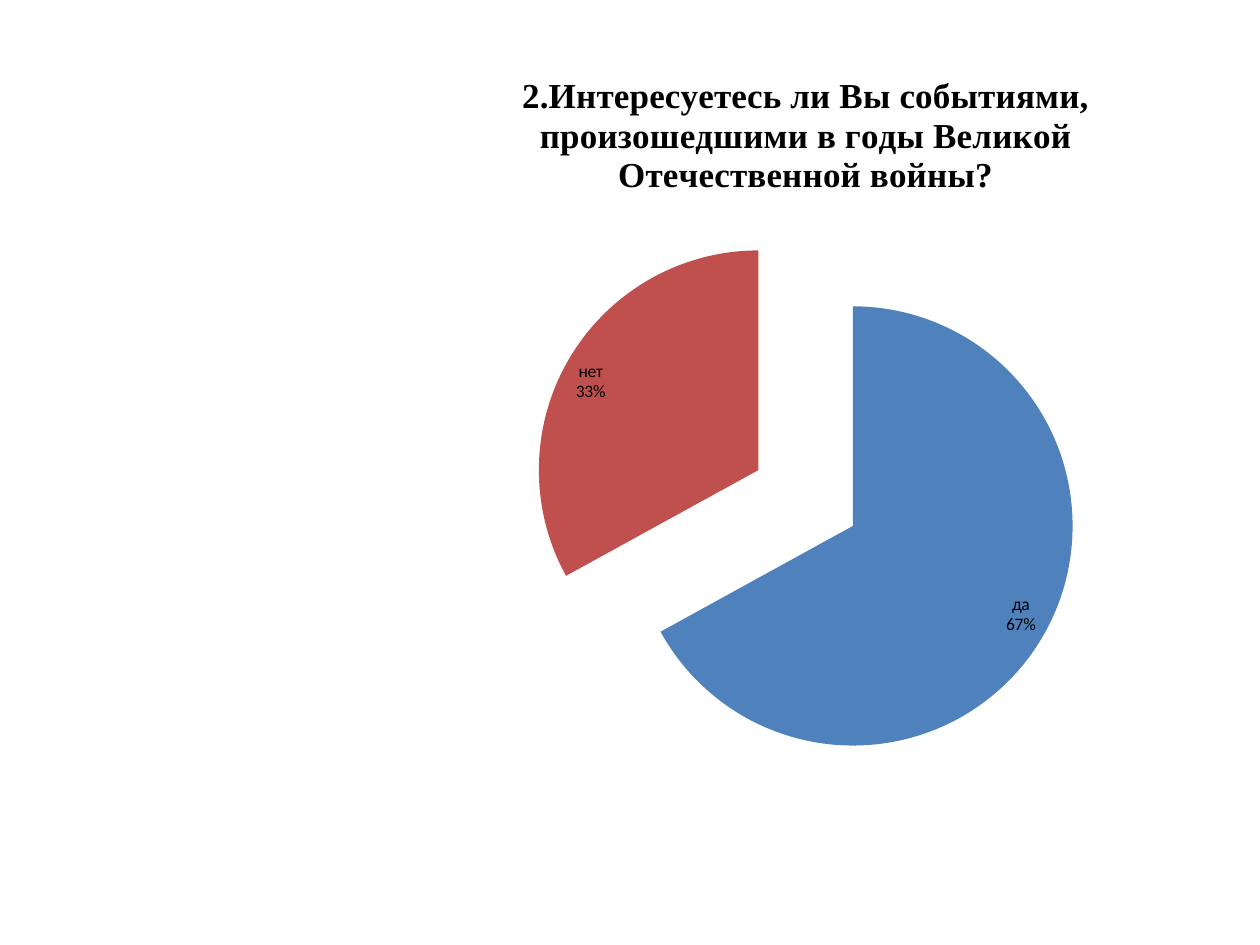
from typing import NamedTuple

from pptx import Presentation
from pptx.chart.chart import Chart
from pptx.chart.data import CategoryChartData
from pptx.dml.color import RGBColor
from pptx.enum.chart import XL_CHART_TYPE, XL_LABEL_POSITION
from pptx.oxml import parse_xml
from pptx.oxml.ns import nsdecls
from pptx.text.text import Font
from pptx.util import Inches, Pt

PIE = XL_CHART_TYPE.PIE
INSIDE_END = XL_LABEL_POSITION.INSIDE_END
BLANK_LAYOUT = 6
BLACK = "000000"
QUESTION = "2.Интересуетесь ли Вы событиями, произошедшими в годы Великой Отечественной войны?"


class Answer(NamedTuple):
    """One slice of the survey pie."""

    label: str
    percent: int
    color: str


ANSWERS = [Answer("да", 67, "4F81BD"), Answer("нет", 33, "C0504D")]


def rgb(value: str) -> RGBColor:
    """Turn a hex string into a colour."""
    return RGBColor.from_string(value)


def format_font(font: Font, name: str, size: int, bold: bool) -> None:
    """Apply a typeface, size and weight in black."""
    for attribute, value in {"name": name, "size": Pt(size), "bold": bold}.items():
        setattr(font, attribute, value)
    font.color.rgb = rgb(BLACK)


def format_title(chart: Chart) -> None:
    """Write the survey question above the pie."""
    chart.has_title = True
    chart.chart_title.include_in_layout = False
    paragraph = chart.chart_title.text_frame.paragraphs[0]
    run = paragraph.add_run()
    run.text = QUESTION
    format_font(run.font, "Times New Roman", 20, True)


def format_slices(chart: Chart, answers: list[Answer], explosion: int) -> None:
    """Colour the slices and pull them apart."""
    series = chart.plots[0].series[0]
    for index, answer in enumerate(answers):
        fill = series.points[index].format.fill
        fill.solid()
        fill.fore_color.rgb = rgb(answer.color)
    element = parse_xml(f'<c:explosion {nsdecls("c")} val="{explosion}"/>')
    series.points[0].format.fill
    series._element.find(".//c:dPt", series._element.nsmap).addprevious(element)


def format_labels(chart: Chart) -> None:
    """Show category and percentage on two lines inside each slice."""
    plot = chart.plots[0]
    plot.vary_by_categories = True
    plot.has_data_labels = True
    labels = plot.data_labels
    settings = {
        "show_category_name": True,
        "show_percentage": True,
        "show_value": False,
        "show_legend_key": False,
        "position": INSIDE_END,
    }
    for attribute, value in settings.items():
        setattr(labels, attribute, value)
    format_font(labels.font, "Calibri", 10, False)
    separator = parse_xml(f'<c:separator {nsdecls("c")}>\n</c:separator>')
    bubble_size = labels._element.find("c:showBubbleSize", labels._element.nsmap)
    bubble_size.addnext(separator)


def main() -> None:
    """Build the survey slide."""
    presentation = Presentation()
    presentation.slide_width, presentation.slide_height = Inches(10), Inches(7.5)
    slide = presentation.slides.add_slide(presentation.slide_layouts[BLANK_LAYOUT])

    data = CategoryChartData()
    data.categories = [answer.label for answer in ANSWERS]
    data.add_series("Series 1", [answer.percent for answer in ANSWERS])
    frame = slide.shapes.add_chart(
        PIE, Inches(3.19), Inches(0.36), Inches(6.41), Inches(5.91), data
    )
    chart = frame.chart
    chart.has_legend = False
    format_font(chart.font, "Calibri", 10, False)
    format_title(chart)
    format_slices(chart, ANSWERS, 25)
    format_labels(chart)

    presentation.save("out.pptx")


if __name__ == "__main__":
    main()
